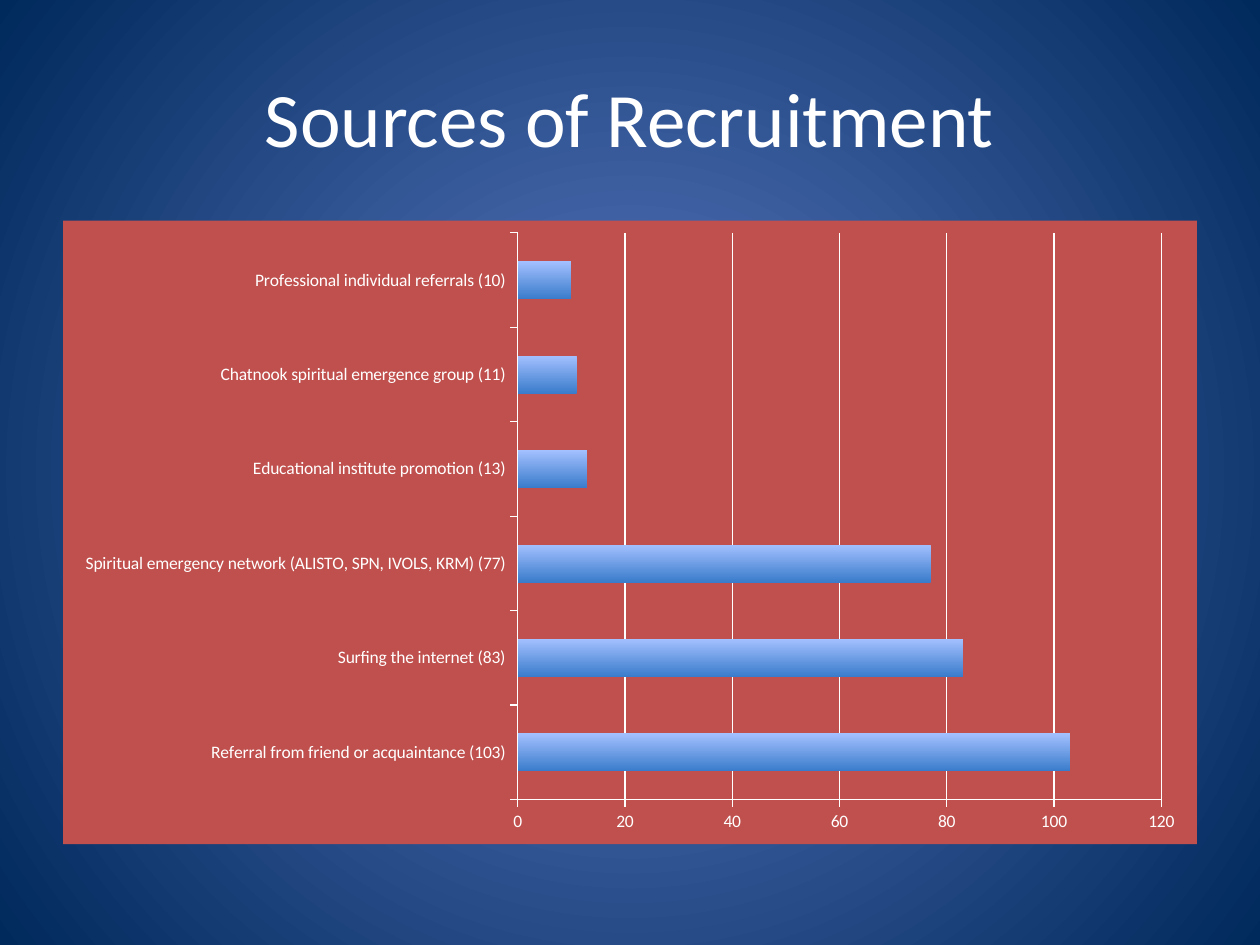
from lxml import etree
from pptx import Presentation
from pptx.chart.data import CategoryChartData
from pptx.dml.color import RGBColor
from pptx.enum.chart import XL_CHART_TYPE, XL_TICK_MARK
from pptx.enum.text import MSO_ANCHOR, PP_ALIGN
from pptx.oxml import parse_xml
from pptx.oxml.ns import nsdecls, qn
from pptx.util import Inches, Pt

BAR_CLUSTERED = XL_CHART_TYPE.BAR_CLUSTERED
OUTSIDE = XL_TICK_MARK.OUTSIDE
MIDDLE = MSO_ANCHOR.MIDDLE
CENTER = PP_ALIGN.CENTER
FONT = "Calibri"
WHITE = "FFFFFF"
PANEL = "C0504D"


def rgb(value):
    return RGBColor.from_string(value)


def set_gradient(fill, colors):
    fill.gradient()
    for stop, color in zip(fill.gradient_stops, colors):
        stop.color.rgb = rgb(color)


prs = Presentation()
prs.slide_width = Inches(10)
prs.slide_height = Inches(7.5)
s = prs.slides.add_slide(prs.slide_layouts[6])

set_gradient(s.background.fill, ["5E7CC5", "00295C"])
grad = s.background._cSld.find(".//" + qn("a:gradFill"))
lin = grad.find(qn("a:lin"))
radial = etree.Element(qn("a:path"), path="circle")
etree.SubElement(radial, qn("a:fillToRect"), l="50000", t="50000", r="50000", b="50000")
grad.replace(lin, radial)

sp = s.shapes.add_textbox(Inches(0.5), Inches(0.3), Inches(9), Inches(1.25))
tf = sp.text_frame
tf.word_wrap = True
tf.vertical_anchor = MIDDLE
tf.text = "Sources of Recruitment"
p = tf.paragraphs[0]
p.alignment = CENTER
r = p.runs[0]
r.font.name = FONT
r.font.size = Pt(44)
r.font.color.rgb = rgb(WHITE)

sources = [
    ("Referral from friend or acquaintance", 103),
    ("Surfing the internet", 83),
    ("Spiritual emergency network (ALISTO, SPN, IVOLS, KRM)", 77),
    ("Educational institute promotion", 13),
    ("Chatnook spiritual emergence group", 11),
    ("Professional individual referrals", 10),
]
data = CategoryChartData()
data.categories = [f"{name} ({count})" for name, count in sources]
data.add_series("Series 1", [count for name, count in sources])
chart = s.shapes.add_chart(
    BAR_CLUSTERED, Inches(0.5), Inches(1.75), Inches(9), Inches(4.95), data
).chart
chart.has_legend = False
chart.has_title = False
chart.font.name = FONT
chart.font.size = Pt(10)
chart.font.color.rgb = rgb(WHITE)

panel = parse_xml(
    f'<c:spPr {nsdecls("c", "a")}><a:solidFill><a:srgbClr val="{PANEL}"/></a:solidFill>'
    "<a:ln><a:noFill/></a:ln></c:spPr>"
)
chart._chartSpace.find(qn("c:chart")).addnext(panel)

plot = chart.plots[0]
plot.gap_width = 150
plot.vary_by_categories = False
bars = plot.series[0].format
set_gradient(bars.fill, ["A3C0FF", "3A7CCB"])
bars.fill.gradient_angle = 270
bars.line.fill.background()

for axis in (chart.category_axis, chart.value_axis):
    axis.major_tick_mark = OUTSIDE
    axis.format.line.color.rgb = rgb(WHITE)
    axis.format.line.width = Pt(0.75)

values = chart.value_axis
values.minimum_scale = 0
values.maximum_scale = 120
values.major_unit = 20
values.has_major_gridlines = True
values.major_gridlines.format.line.color.rgb = rgb(WHITE)
values.major_gridlines.format.line.width = Pt(0.75)

prs.save("out.pptx")
